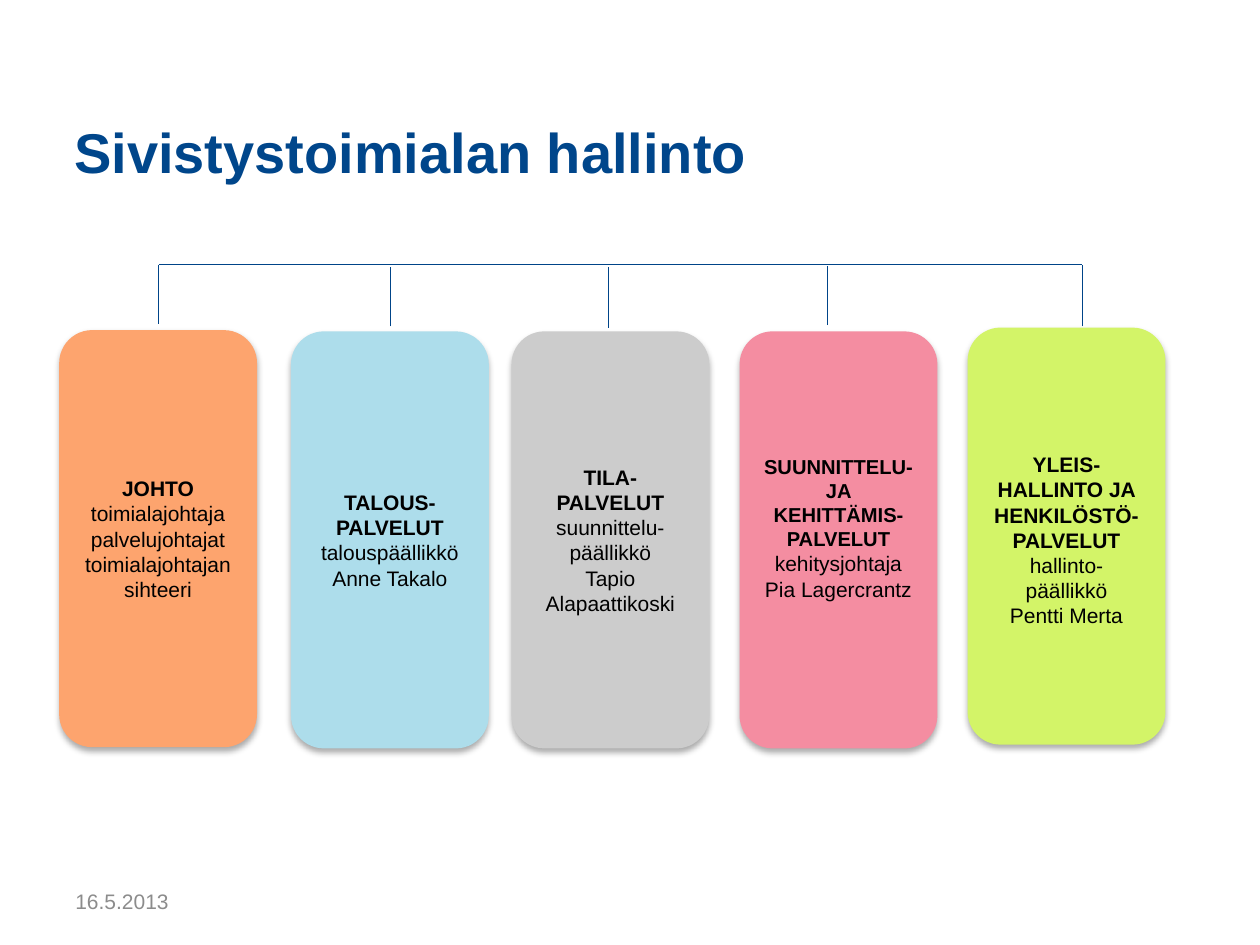
from dataclasses import dataclass

from lxml import etree
from pptx import Presentation
from pptx.dml.color import RGBColor
from pptx.enum import shapes, text
from pptx.oxml.ns import qn
from pptx.util import Inches, Pt

COLOURS = {
    "title": "00468B", "line": "004488", "date": "8C8C8C", "text": "000000",
    "orange": "FDA46E", "blue": "ADDDEB", "grey": "CCCCCC",
    "pink": "F48DA1", "green": "D3F468",
}
FONT = "Arial"
BOX_WIDTH, BOX_HEIGHT = 1.57, 3.31
BAR_TOP = 2.1
INSET = 0.05


@dataclass
class Unit:
    """One department: its box, text and the stem above it."""
    left: float
    top: float
    colour: str
    headings: list[str]
    staff: list[str]
    stem_x: float
    stem_top: float
    stem_bottom: float
    heading_size: float = 12
    extra_top: float = 0
    extra_bottom: float = 0


UNITS = [
    Unit(0.47, 2.62, "orange", ["JOHTO"],
         ["toimialajohtaja", "palvelujohtajat", "toimialajohtajan sihteeri"],
         1.26, BAR_TOP, 2.57),
    Unit(2.31, 2.63, "blue", ["TALOUS-PALVELUT"],
         ["talouspäällikkö", "Anne Takalo"], 3.1, 2.12, 2.59),
    Unit(4.06, 2.63, "grey", ["TILA-PALVELUT"],
         ["suunnittelu-päällikkö", "Tapio", "Alapaattikoski"], 4.83, 2.12, 2.6),
    Unit(5.87, 2.63, "pink", ["SUUNNITTELU- JA KEHITTÄMIS-PALVELUT"],
         ["kehitysjohtaja", "Pia Lagercrantz"], 6.57, 2.11, 2.58,
         heading_size=11.5, extra_bottom=0.19),
    Unit(7.68, 2.6, "green", ["YLEIS-", "HALLINTO JA HENKILÖSTÖ-PALVELUT"],
         ["hallinto-päällikkö", "Pentti Merta"], 8.59, BAR_TOP, 2.59,
         extra_top=0.06),
]


def colour(name: str) -> RGBColor:
    return RGBColor.from_string(COLOURS[name])


def add_run(paragraph, words: str, size: float, name: str, bold: bool = False) -> None:
    run = paragraph.add_run()
    run.text = words
    run.font.name = FONT
    run.font.size = Pt(size)
    run.font.bold = bold
    run.font.color.rgb = colour(name)


def add_label(slide, left: float, top: float, width: float, height: float,
              words: str, size: float, name: str, bold: bool, anchor, inset: float) -> None:
    box = slide.shapes.add_textbox(Inches(left), Inches(top), Inches(width), Inches(height))
    frame = box.text_frame
    frame.word_wrap = True
    frame.vertical_anchor = anchor
    frame.margin_left = frame.margin_right = Inches(inset)
    frame.margin_top = frame.margin_bottom = Inches(inset / 2)
    add_run(frame.paragraphs[0], words, size, name, bold)


def add_soft_shadow(shape) -> None:
    shape.shadow.inherit = False
    effects = shape._element.spPr.find(qn("a:effectLst"))
    shadow = etree.SubElement(effects, qn("a:outerShdw"), blurRad=str(Pt(3.5)),
                              dist=str(Pt(2.2)), dir="5400000", rotWithShape="0")
    black = etree.SubElement(shadow, qn("a:srgbClr"), val=COLOURS["text"])
    etree.SubElement(black, qn("a:alpha"), val="32000")


def add_unit(slide, unit: Unit) -> None:
    shape = slide.shapes.add_shape(
        shapes.MSO_SHAPE.ROUNDED_RECTANGLE, Inches(unit.left), Inches(unit.top),
        Inches(BOX_WIDTH), Inches(BOX_HEIGHT))
    shape.fill.solid()
    shape.fill.fore_color.rgb = colour(unit.colour)
    shape.line.fill.background()
    add_soft_shadow(shape)
    frame = shape.text_frame
    frame.word_wrap = True
    frame.vertical_anchor = text.MSO_ANCHOR.MIDDLE
    frame.margin_left = frame.margin_right = Inches(2 * INSET)
    frame.margin_top = Inches(INSET + unit.extra_top)
    frame.margin_bottom = Inches(INSET + unit.extra_bottom)
    lines = [(words, unit.heading_size, True) for words in unit.headings]
    lines += [(words, 12, False) for words in unit.staff]
    for index, (words, size, bold) in enumerate(lines):
        paragraph = frame.add_paragraph() if index else frame.paragraphs[0]
        paragraph.alignment = text.PP_ALIGN.CENTER
        add_run(paragraph, words, size, "text", bold)


def add_line(slide, x1: float, y1: float, x2: float, y2: float) -> None:
    line = slide.shapes.add_connector(
        shapes.MSO_CONNECTOR.STRAIGHT, Inches(x1), Inches(y1), Inches(x2), Inches(y2))
    line.line.color.rgb = colour("line")
    line.line.width = Pt(0.75)
    etree.SubElement(line._element.spPr, qn("a:effectLst"))


def main() -> None:
    presentation = Presentation()
    presentation.slide_width, presentation.slide_height = Inches(10), Inches(7.5)
    slide = presentation.slides.add_slide(presentation.slide_layouts[6])

    # Title and date
    add_label(slide, 0.59, 0.6, 5.67, 0.87, "Sivistystoimialan hallinto", 32,
              "title", True, text.MSO_ANCHOR.BOTTOM, 0)
    add_label(slide, 0.5, 6.95, 2.33, 0.4, "16.5.2013", 12,
              "date", False, text.MSO_ANCHOR.MIDDLE, 0.1)

    # Departments with their stems
    for unit in UNITS:
        add_unit(slide, unit)
        add_line(slide, unit.stem_x, unit.stem_bottom, unit.stem_x, unit.stem_top)

    # Bar joining the stems
    add_line(slide, UNITS[0].stem_x, BAR_TOP, UNITS[-1].stem_x, BAR_TOP)

    presentation.save("out.pptx")


if __name__ == "__main__":
    main()
